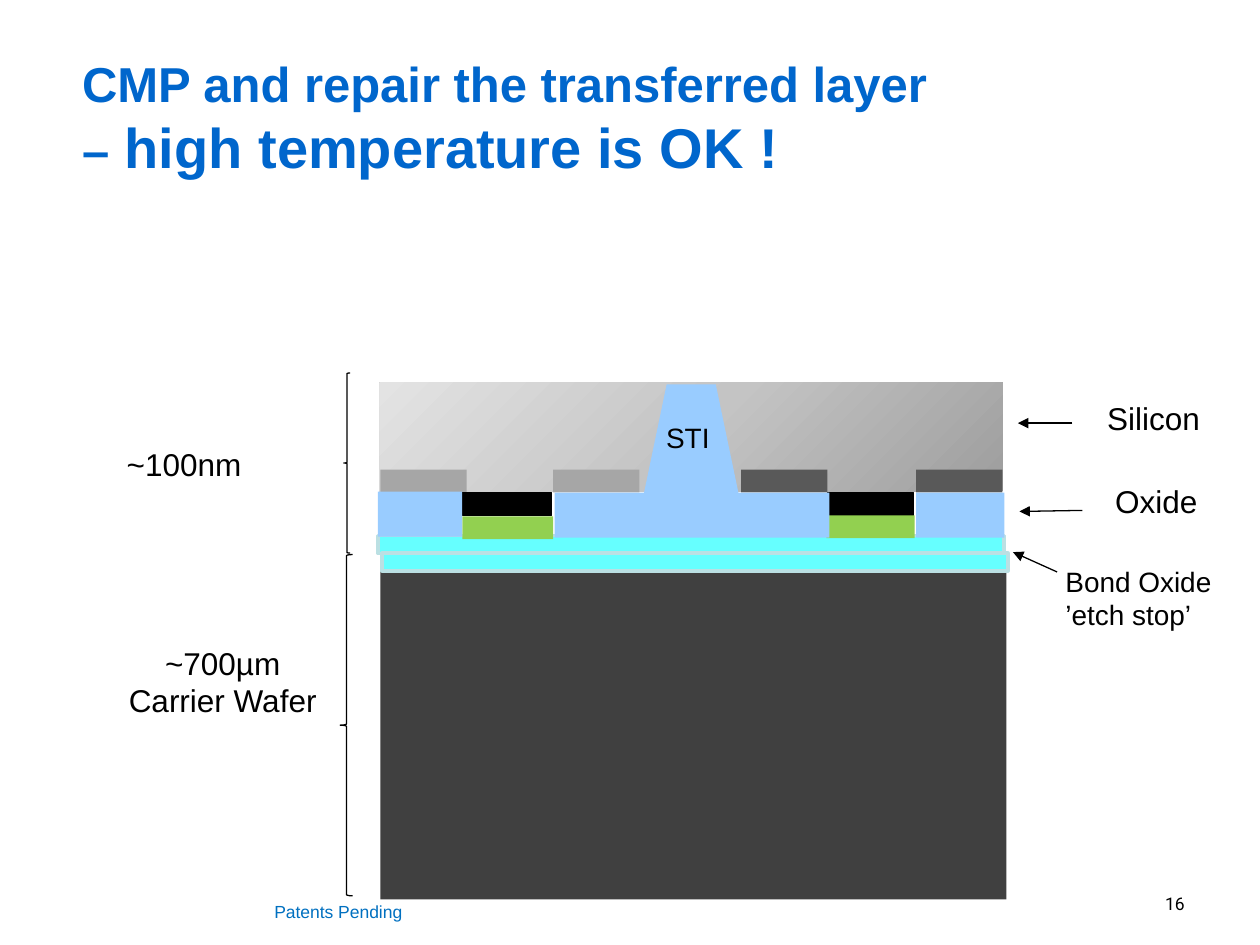
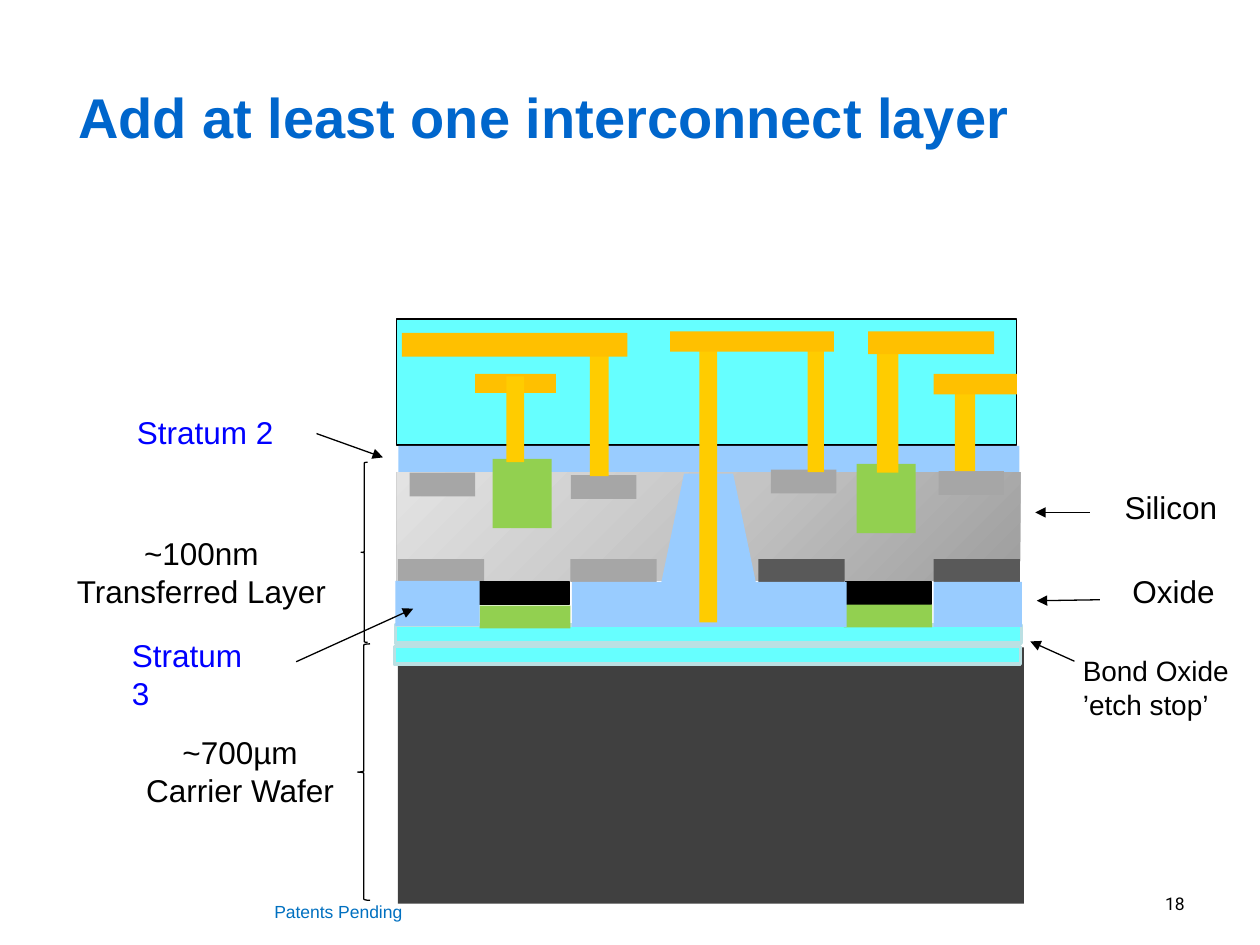
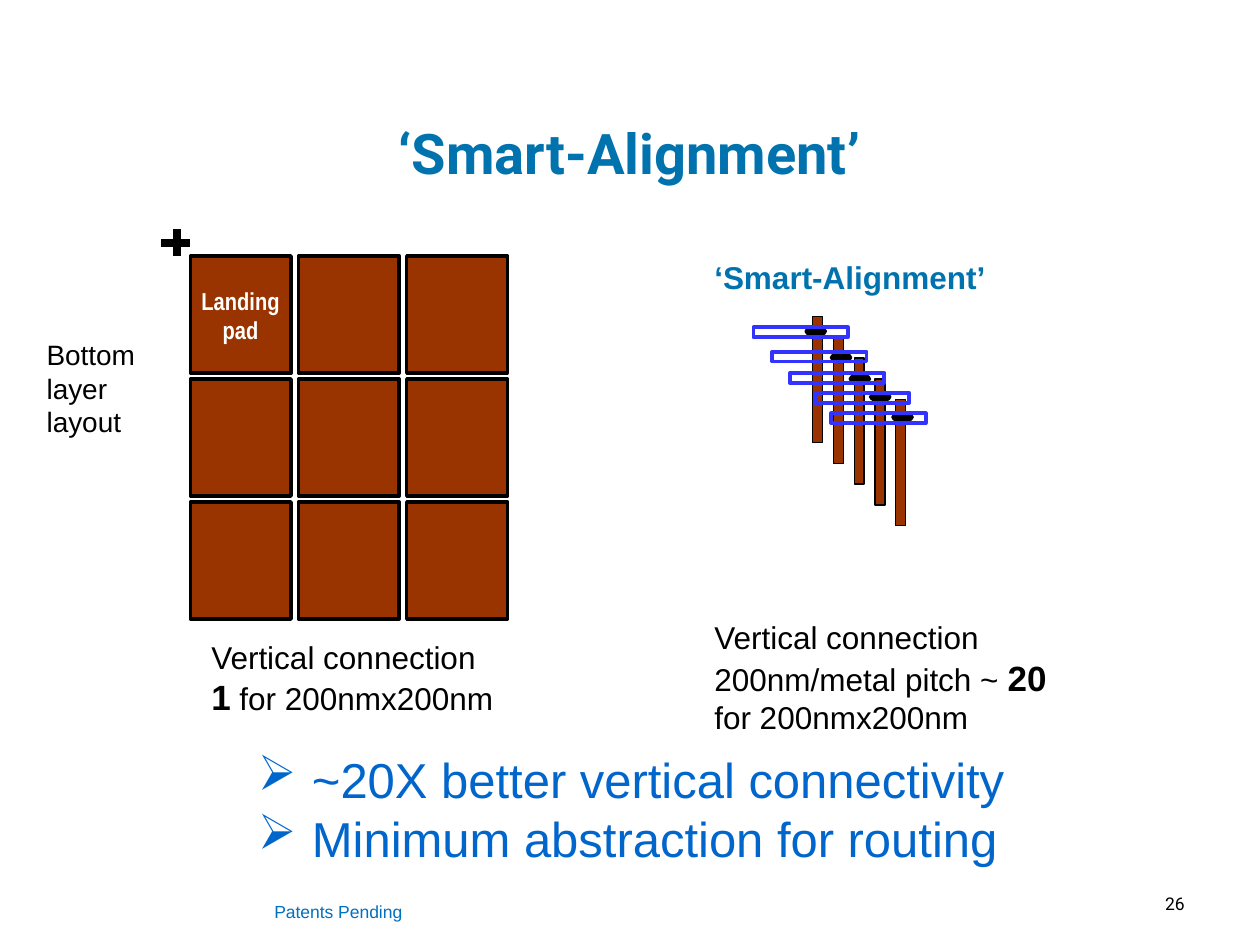
"""Build three slides on layer transfer, interconnect and smart alignment."""
from copy import deepcopy
from dataclasses import dataclass
from typing import NamedTuple

from lxml import etree
from pptx import Presentation
from pptx import util as u
from pptx.dml import color as dml
from pptx.enum import shapes, text
from pptx.oxml import ns

COLORS = {
    "black": "000000", "white": "FFFFFF", "title": "0066CC", "teal": "0073AE",
    "footer": "0070C0", "stratum": "0000FF", "oxide": "99CCFF", "bond": "66FFFF",
    "bond_edge": "BBE0E3", "wafer": "404040", "light_implant": "A6A6A6",
    "dark_implant": "595959", "gate": "92D050", "via": "FFCC00", "wire": "FFC000",
    "pad": "993300", "frame": "3333FF", "silicon_dark": "9E9E9E",
    "silicon_mid": "C4C4C4", "silicon_light": "E3E3E3",
}
LEFT, CENTER, RIGHT = text.PP_ALIGN.LEFT, text.PP_ALIGN.CENTER, text.PP_ALIGN.RIGHT
RECTANGLE = shapes.MSO_SHAPE.RECTANGLE


class Shift(NamedTuple):
    """Offset of a drawing in centimetres."""
    x: float = 0
    y: float = 0


class Span(NamedTuple):
    """Part of a line with its own size and weight."""
    text: str
    size: float
    bold: bool = False


class Block(NamedTuple):
    """Preset shape with lengths in centimetres."""
    left: float
    top: float
    width: float
    height: float
    fill: str = ""
    line: str = ""
    weight: float = 0.75
    kind: shapes.MSO_SHAPE = RECTANGLE


class Line(NamedTuple):
    """Straight line between two points in centimetres."""
    x1: float
    y1: float
    x2: float
    y2: float
    weight: float = 0.75
    arrow: bool = True


@dataclass(frozen=True)
class Style:
    """Look of a piece of text."""
    size: float = 18
    color: str = "black"
    bold: bool = False
    font: str = "Arial"
    align: text.PP_ALIGN = LEFT


@dataclass(frozen=True)
class Label:
    """Text box with lengths in centimetres."""
    left: float
    top: float
    width: float
    height: float
    lines: tuple
    style: Style = Style()
    wrap: bool = True
    bullet: str = ""


BODY = Style()
NOTE = Style(16)
CENTERED = Style(align=CENTER)
STRATUM = Style(color="stratum")
TITLE = Style(32, "title", True)
NO_SHIFT = Shift()


def rgb(name: str) -> dml.RGBColor:
    """Look up a colour by name."""
    return dml.RGBColor.from_string(COLORS[name])


def add_bullet(paragraph, character: str) -> None:
    """Give a paragraph a hanging bullet."""
    properties = paragraph._p.get_or_add_pPr()
    properties.set("marL", str(u.Cm(1.09)))
    properties.set("indent", str(-u.Cm(1.09)))
    etree.SubElement(properties, ns.qn("a:buChar"), char=character)


def write_lines(frame, lines: tuple, style: Style, bullet: str = "") -> None:
    """Fill a text frame with one paragraph per line."""
    for index, line in enumerate(lines):
        paragraph = frame.paragraphs[0] if index == 0 else frame.add_paragraph()
        if bullet:
            add_bullet(paragraph, bullet)
        spans = (Span(line, style.size, style.bold),) if isinstance(line, str) else line
        paragraph.alignment = style.align
        for span in spans:
            run = paragraph.add_run()
            run.text = span.text
            run.font.name = style.font
            run.font.size = u.Pt(span.size)
            run.font.bold = span.bold
            run.font.color.rgb = rgb(style.color)


def draw_label(slide, label: Label, shift: Shift = NO_SHIFT) -> None:
    """Draw a text box."""
    box = slide.shapes.add_textbox(u.Cm(label.left + shift.x), u.Cm(label.top + shift.y),
                                   u.Cm(label.width), u.Cm(label.height))
    box.text_frame.word_wrap = label.wrap
    write_lines(box.text_frame, label.lines, label.style, label.bullet)


def paint(shape, fill: str, line: str = "", weight: float = 0.75) -> None:
    """Set fill and outline and drop the shadow."""
    shape.shadow.inherit = False
    if fill:
        shape.fill.solid()
        shape.fill.fore_color.rgb = rgb(fill)
    else:
        shape.fill.background()
    if line:
        shape.line.color.rgb = rgb(line)
        shape.line.width = u.Pt(weight)
    else:
        shape.line.fill.background()


def draw_block(slide, block: Block, shift: Shift = NO_SHIFT):
    """Draw a preset shape."""
    shape = slide.shapes.add_shape(block.kind, u.Cm(block.left + shift.x),
                                   u.Cm(block.top + shift.y),
                                   u.Cm(block.width), u.Cm(block.height))
    paint(shape, block.fill, block.line, block.weight)
    return shape


def draw_line(slide, line: Line, shift: Shift = NO_SHIFT) -> None:
    """Draw a black line, with an arrowhead at its end if wanted."""
    connector = slide.shapes.add_connector(
        shapes.MSO_CONNECTOR.STRAIGHT, u.Cm(line.x1 + shift.x), u.Cm(line.y1 + shift.y),
        u.Cm(line.x2 + shift.x), u.Cm(line.y2 + shift.y))
    connector.line.color.rgb = rgb("black")
    connector.line.width = u.Pt(line.weight)
    properties = connector._element.spPr
    if line.arrow:
        etree.SubElement(properties.find(ns.qn("a:ln")), ns.qn("a:tailEnd"), type="triangle")
    etree.SubElement(properties, ns.qn("a:effectLst"))


def draw_brace(slide, left: float, top: float, width: float, height: float,
               shift: Shift) -> None:
    """Draw a left brace that measures a layer."""
    brace = draw_block(slide, Block(left, top, width, height, line="black",
                                    kind=shapes.MSO_SHAPE.LEFT_BRACE), shift)
    brace.adjustments[0] = 0.094


def draw_silicon(slide, shift: Shift) -> None:
    """Draw the silicon layer with its diagonal gradient."""
    silicon = draw_block(slide, Block(7.65, 7.72, 12.57, 2.18), shift)
    silicon.fill.gradient()
    silicon.fill.gradient_angle = 135
    stops = silicon._element.spPr.find(".//" + ns.qn("a:gsLst"))
    stops.insert(1, deepcopy(stops[0]))
    names = ("silicon_dark", "silicon_mid", "silicon_light")
    for index, (stop, name) in enumerate(zip(silicon.fill.gradient_stops, names)):
        stop.position = index / 2
        stop.color.rgb = rgb(name)


def draw_trench(slide, shift: Shift) -> None:
    """Draw the isolation trench as a trapezoid outline."""
    corners = [(u.Cm(x + shift.x), u.Cm(y + shift.y)) for x, y in
               ((14.94, 10.19), (14.43, 7.75), (13.44, 7.75), (12.93, 10.19))]
    builder = slide.shapes.build_freeform(*corners[0])
    builder.add_line_segments(corners[1:], close=True)
    paint(builder.convert_to_shape(), "oxide")


DEVICE_BLOCKS = (
    Block(7.62, 10.8, 12.62, 0.36, "bond", "bond_edge", 2),
    *(Block(left, 9.47, 1.74, 0.46, fill) for left, fill in (
        (7.67, "light_implant"), (11.15, "light_implant"),
        (14.94, "dark_implant"), (18.47, "dark_implant"))),
    Block(9.32, 9.93, 1.8, 0.46, "black", "black"),
    Block(16.69, 9.93, 1.73, 0.46, "black", "black"),
    Block(9.32, 10.41, 1.83, 0.46, "gate"),
    Block(16.66, 10.39, 1.78, 0.46, "gate"),
    Block(7.62, 9.91, 1.7, 0.91, "oxide"),
    Block(11.18, 9.93, 5.54, 0.91, "oxide"),
    Block(18.47, 9.93, 1.78, 0.91, "oxide"),
)
DEVICE_LABELS = (
    Label(2.24, 12.85, 4.5, 1.78, ("~700µm", "Carrier Wafer"), CENTERED, False),
    Label(22.07, 7.92, 2.57, 1.02, ("Silicon",)),
    Label(22.23, 9.6, 2.16, 1.02, ("Oxide",), BODY, False),
    Label(21.23, 11.25, 3.84, 1.63, ("Bond Oxide ’etch stop’",), NOTE),
)
DEVICE_ARROWS = (
    Line(21.62, 8.53, 20.52, 8.53),
    Line(21.82, 10.29, 20.55, 10.31),
    Line(21.31, 11.53, 20.42, 11.13),
)


def draw_device(slide, shift: Shift, wafer_height: float, lower_bond: tuple,
                layer_lines: tuple) -> None:
    """Draw the transferred layer on its carrier wafer, with labels."""
    draw_block(slide, Block(7.67, 11.25, 12.62, wafer_height, "wafer"), shift)
    draw_silicon(slide, shift)
    draw_trench(slide, shift)
    for block in DEVICE_BLOCKS:
        draw_block(slide, block, shift)
    draw_block(slide, Block(*lower_bond, 12.62, 0.36, "bond", "bond_edge", 2))
    draw_brace(slide, 6.93, 7.52, 0.13, 3.63, shift)
    draw_brace(slide, 6.86, 11.18, 0.25, wafer_height, shift)
    layer_label = Label(0, 8.84, 7.42, 1.78, layer_lines, CENTERED)
    for label in (*DEVICE_LABELS, layer_label):
        draw_label(slide, label, shift)
    for arrow in DEVICE_ARROWS:
        draw_line(slide, arrow, shift)


def start_slide(presentation, number: int, title: Label):
    """Add a title-only slide with its title and footer."""
    slide = presentation.slides.add_slide(presentation.slide_layouts[5])
    shape = slide.shapes.title
    shape.left, shape.top = u.Cm(title.left), u.Cm(title.top)
    shape.width, shape.height = u.Cm(title.width), u.Cm(title.height)
    frame = shape.text_frame
    frame.word_wrap = True
    frame.auto_size = text.MSO_AUTO_SIZE.NONE
    frame.vertical_anchor = text.MSO_ANCHOR.MIDDLE
    write_lines(frame, title.lines, title.style)
    draw_label(slide, Label(5.28, 18.03, 3.1, 0.69, ("Patents Pending",),
                            Style(10, "footer"), False))
    draw_label(slide, Label(21.31, 17.87, 2.82, 0.84, (str(number),),
                            Style(10, font="Roboto", align=RIGHT)))
    return slide


def build_repair_slide(presentation) -> None:
    """Build the slide on repairing the transferred layer."""
    lines = ((Span("CMP and repair the transferred layer", 28, True),),
             (Span("–", 28, True), Span(" high temperature is OK !", 32, True)))
    slide = start_slide(presentation, 16, Label(1.4, 0.76, 24, 3.18, lines, TITLE))
    draw_device(slide, NO_SHIFT, 6.88, (7.7, 11.15), ("~100nm",))
    draw_label(slide, Label(13.18, 8.36, 1.75, 0.94, ("STI",), NOTE))


def build_interconnect_slide(presentation) -> None:
    """Build the slide that adds an interconnect layer."""
    slide = start_slide(presentation, 18, Label(
        1.32, 0.76, 24.08, 3.18, ("Add at least one interconnect layer",), TITLE))
    draw_block(slide, Block(8, 6.43, 12.5, 2.54, "bond", "black"))
    draw_block(slide, Block(8.03, 8.99, 12.52, 0.91, "oxide"))
    draw_device(slide, Shift(0.35, 1.8), 5.17, (7.95, 13.03),
                ("~100nm", "Transferred Layer"))
    gates = [Block(left, top, 1.19, 1.4, "gate")
             for left, top in ((9.93, 9.25), (17.27, 9.35))]
    contacts = [Block(left, top, 1.32, 0.48, "light_implant") for left, top in (
        (8.26, 9.53), (11.51, 9.58), (15.54, 9.47), (18.92, 9.5))]
    vias = [Block(*place, "via") for place in (
        (14.1, 6.86, 0.36, 5.69), (11.89, 7.14, 0.38, 2.46), (16.28, 6.88, 0.33, 2.64),
        (17.68, 6.71, 0.43, 2.82), (19.25, 7.87, 0.41, 1.63))]
    wires = [Block(*place, "wire") for place in (
        (18.82, 7.54, 1.68, 0.41), (17.5, 6.68, 2.54, 0.46), (13.51, 6.68, 3.3, 0.41),
        (9.58, 7.54, 1.63, 0.38), (8.1, 6.71, 4.55, 0.48))]
    gate_via = Block(10.21, 7.59, 0.36, 1.73, "via")
    for block in (*gates, *contacts, *vias, *wires, gate_via):
        draw_block(slide, block)
    draw_label(slide, Label(2.51, 8.2, 3.33, 1.02, ("Stratum 2",), STRATUM))
    draw_label(slide, Label(2.41, 12.7, 3.25, 1.02, ("Stratum 3",), STRATUM, False))
    draw_line(slide, Line(6.38, 8.74, 7.72, 9.22))
    draw_line(slide, Line(5.97, 13.34, 8.33, 12.27))


def build_alignment_slide(presentation) -> None:
    """Build the slide that compares landing pads with smart alignment."""
    heading = ("‘Smart-Alignment’",)
    slide = start_slide(presentation, 26, Label(
        0, 1.47, 25.4, 3.18, heading, Style(32, "teal", True, "Roboto", CENTER)))
    draw_line(slide, Line(3.25, 4.9, 3.84, 4.9, 4.5, False))
    draw_line(slide, Line(3.56, 4.62, 3.56, 5.16, 4.5, False))
    pads = [Block(3.84 + 2.18 * column, 5.16 + 2.48 * row, 2.03, 2.36, "pad", "black", 2)
            for row in range(3) for column in range(3)]
    bars = [Block(16.38 + 0.42 * index, 6.38 + 0.42 * index, 0.2, 2.54, "pad", "black")
            for index in range(5)]
    contacts = [Block(left, top, 0.43, 0.2, "black", "black", kind=shapes.MSO_SHAPE.OVAL)
                for left, top in ((16.23, 6.58), (16.74, 7.11), (17.12, 7.54),
                                  (17.53, 7.9), (17.98, 8.31))]
    frames = [Block(left, top, 1.9, 0.2, line="frame", weight=2.25)
              for left, top in ((15.19, 6.6), (15.57, 7.09), (15.93, 7.52),
                                (16.43, 7.92), (16.76, 8.33))]
    for block in (*pads, *bars, *contacts, *frames):
        draw_block(slide, block)
    labels = (
        Label(0.69, 6.68, 2.97, 2.29, ("Bottom layer", "layout"), NOTE),
        Label(3.58, 5.64, 2.54, 1.37, ("Landing pad",),
              Style(14, "white", True, "Arial Narrow", CENTER)),
        Label(4.01, 12.73, 6.2, 1.85, (
            "Vertical connection",
            (Span("1", 20, True), Span(" for 200nmx200nm", 18))), BODY, False),
        Label(14.15, 12.34, 7.21, 2.62, (
            "Vertical connection",
            (Span("200nm/metal pitch ~ ", 18), Span("20", 20, True)),
            "for 200nmx200nm"), BODY, False),
        Label(4.95, 14.99, 16.81, 2.62, (
            "~20X better vertical connectivity",
            "Minimum abstraction for routing"), Style(28, "title"), bullet="➢"),
        Label(14.15, 5.08, 5.97, 1.02, heading, Style(18, "teal", True), False),
    )
    for label in labels:
        draw_label(slide, label)


def main() -> None:
    """Build and save the presentation."""
    presentation = Presentation()
    presentation.slide_width, presentation.slide_height = u.Cm(25.4), u.Cm(19.05)
    build_repair_slide(presentation)
    build_interconnect_slide(presentation)
    build_alignment_slide(presentation)
    presentation.save("out.pptx")


if __name__ == "__main__":
    main()
